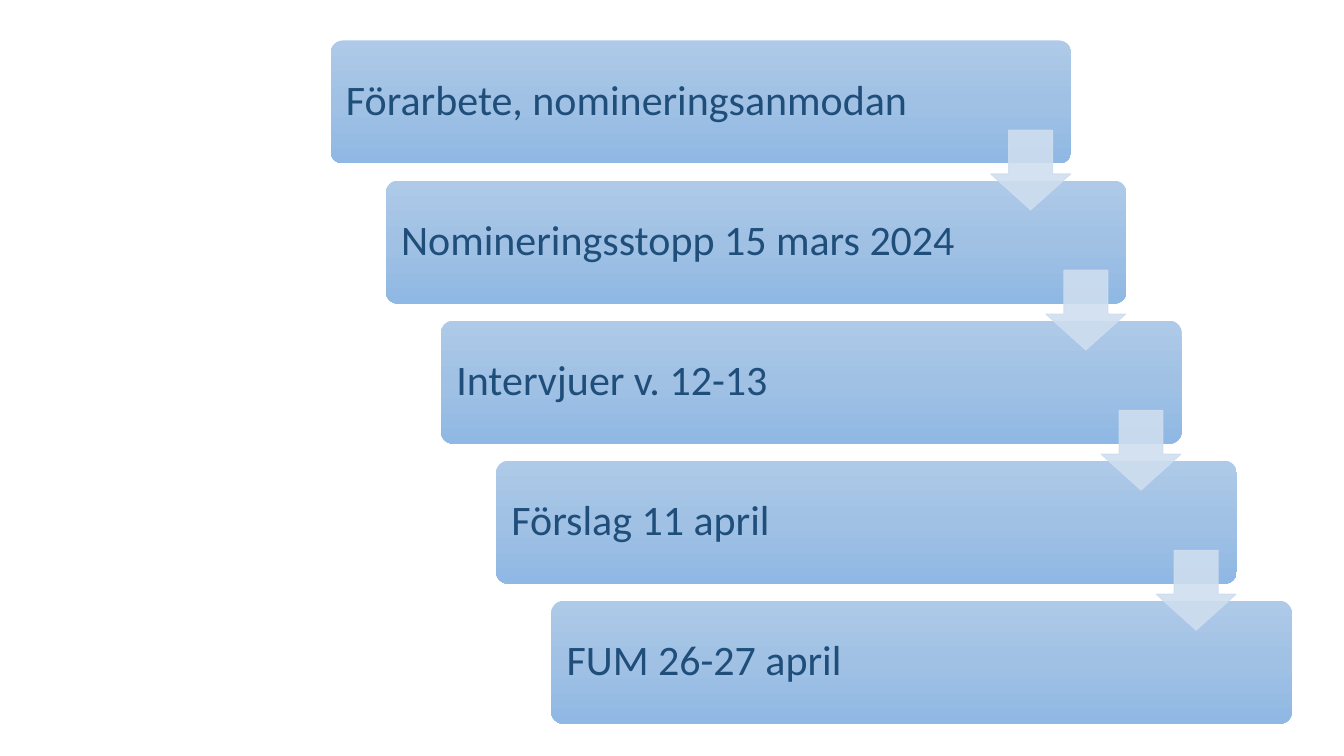
from copy import deepcopy
from dataclasses import dataclass

from lxml.etree import SubElement
from pptx import Presentation
from pptx.dml.color import RGBColor
from pptx.enum.shapes import MSO_SHAPE
from pptx.enum.text import MSO_ANCHOR, PP_ALIGN
from pptx.oxml.ns import qn
from pptx.shapes.autoshape import Shape
from pptx.slide import Slide
from pptx.util import Cm, Pt

COLORS = {
    "card_top": "AFCAE9",
    "card_middle": "A0C1E4",
    "card_bottom": "8FB8E4",
    "text": "1E4E79",
    "arrow": "CFDEEF",
}
ARROW_OPACITY = 89

# Staircase layout in centimetres: each step moves right and down
STEP_X, STEP_Y = 1.39, 3.53
CARD_LEFT, CARD_TOP, CARD_WIDTH, CARD_HEIGHT = 8.33, 1.02, 18.67, 3.1
ARROW_LEFT, ARROW_TOP, ARROW_SIZE = 24.97, 3.28, 2.01
CARD_INSET = 0.3


@dataclass
class Step:
    index: int
    label: str


LABELS = [
    "Förarbete, nomineringsanmodan",
    "Nomineringsstopp 15 mars 2024",
    "Intervjuer v. 12-13",
    "Förslag 11 april",
    "FUM 26-27 april",
]
STEPS = [Step(index, label) for index, label in enumerate(LABELS)]


def color(name: str) -> RGBColor:
    return RGBColor.from_string(COLORS[name])


def fill_card(card: Shape) -> None:
    """Apply the three-stop gradient from top to bottom."""
    card.fill.gradient()
    card.fill.gradient_angle = 270
    stop_list = next(card._element.spPr.iter(qn("a:gsLst")))
    stop_list.insert(1, deepcopy(stop_list[0]))
    names = ("card_top", "card_middle", "card_bottom")
    for stop, name, position in zip(card.fill.gradient_stops, names, (0, 0.5, 1)):
        stop.color.rgb = color(name)
        stop.position = position


def add_card(page: Slide, step: Step) -> None:
    card = page.shapes.add_shape(
        MSO_SHAPE.ROUNDED_RECTANGLE,
        Cm(CARD_LEFT + step.index * STEP_X), Cm(CARD_TOP + step.index * STEP_Y),
        Cm(CARD_WIDTH), Cm(CARD_HEIGHT),
    )
    card.adjustments[0] = 0.1
    card.shadow.inherit = False
    card.line.fill.background()
    fill_card(card)

    frame = card.text_frame
    frame.word_wrap = True
    frame.vertical_anchor = MSO_ANCHOR.MIDDLE
    frame.margin_left = frame.margin_right = Cm(CARD_INSET)
    frame.margin_top = frame.margin_bottom = Cm(CARD_INSET)
    para = frame.paragraphs[0]
    para.text = step.label
    para.alignment = PP_ALIGN.LEFT
    para.line_spacing = 0.9
    para.font.name = "Calibri"
    para.font.size = Pt(30)
    para.font.color.rgb = color("text")


def add_arrow(page: Slide, step: Step) -> None:
    arrow = page.shapes.add_shape(
        MSO_SHAPE.DOWN_ARROW,
        Cm(ARROW_LEFT + step.index * STEP_X), Cm(ARROW_TOP + step.index * STEP_Y),
        Cm(ARROW_SIZE), Cm(ARROW_SIZE),
    )
    arrow.adjustments[0] = 0.55
    arrow.adjustments[1] = 0.45
    arrow.shadow.inherit = False
    arrow.fill.solid()
    arrow.fill.fore_color.rgb = color("arrow")
    arrow.line.color.rgb = color("arrow")
    arrow.line.width = Pt(0.75)
    for tint in arrow._element.spPr.iter(qn("a:srgbClr")):
        SubElement(tint, qn("a:alpha"), val=str(ARROW_OPACITY * 1000))


def main() -> None:
    deck = Presentation()
    deck.slide_width, deck.slide_height = Cm(33.87), Cm(19.05)
    page = deck.slides.add_slide(deck.slide_layouts[6])

    # Process steps
    for step in STEPS:
        add_card(page, step)

    # Arrows to the next step, on top of the cards
    for step in STEPS[:-1]:
        add_arrow(page, step)

    deck.save("out.pptx")


if __name__ == "__main__":
    main()
